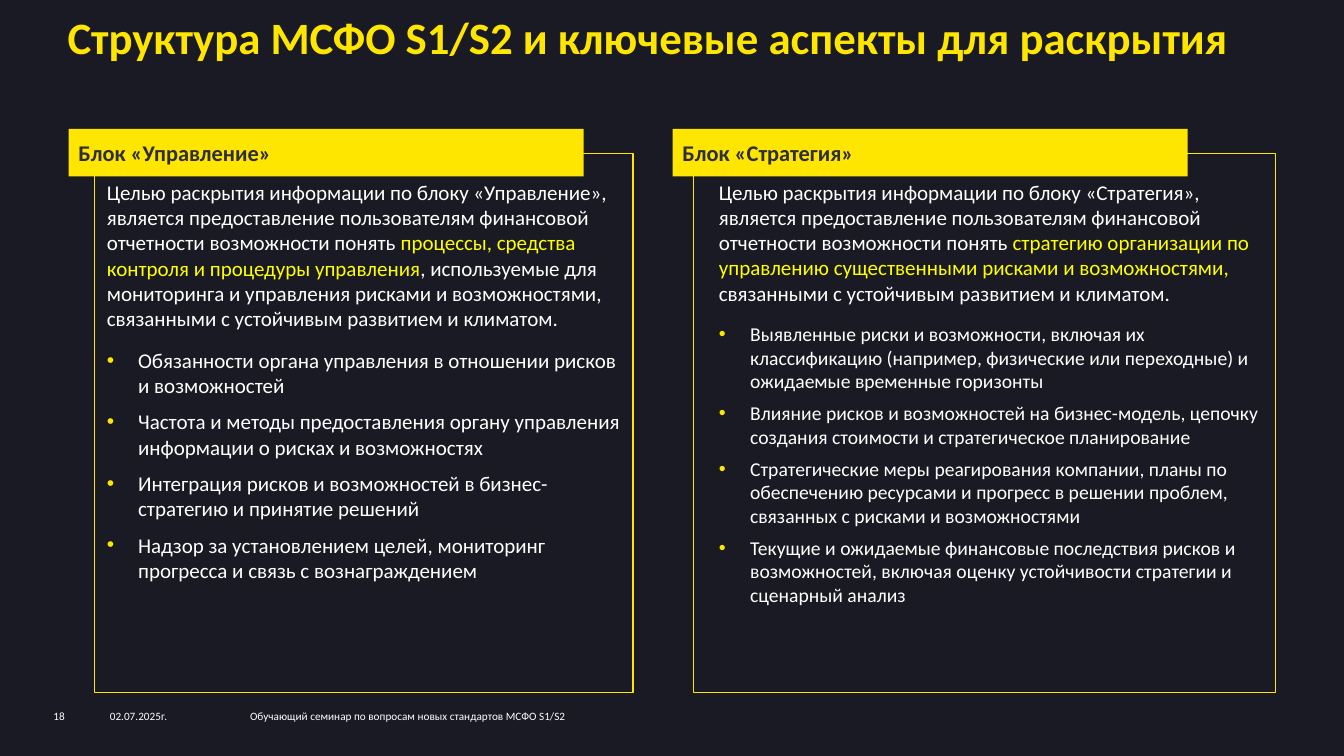
import pptx
import pptx.util
import pptx.dml.color
import pptx.enum.shapes
import pptx.enum.text
import pptx.oxml.ns
import lxml.etree

Inches = pptx.util.Inches
Pt = pptx.util.Pt

COLORS = {
    "background": "1A1A24",
    "accent": "FFE600",
    "highlight": "FFFF00",
    "text": "FFFFFF",
    "heading": "2E2E38",
}


def rgb(name):
    return pptx.dml.color.RGBColor.from_string(COLORS[name])


def write(text, frame, size=15, color="text", bold=False, after=0, line=None,
          bullet=False, left=0, new=True):
    if not new:
        paragraph = frame.paragraphs[-1]
    elif frame.paragraphs[0].runs:
        paragraph = frame.add_paragraph()
    else:
        paragraph = frame.paragraphs[0]
        frame.word_wrap = True
        frame.margin_left = Inches(left)
        frame.margin_top = frame.margin_right = frame.margin_bottom = 0
    if new:
        paragraph.alignment = pptx.enum.text.PP_ALIGN.LEFT
        paragraph.space_after = Pt(after)
        if line:
            paragraph.line_spacing = line
    if bullet:
        properties = paragraph._p.get_or_add_pPr()
        properties.set("marL", str(Inches(0.31)))
        properties.set("indent", str(-Inches(0.31)))
        qn = pptx.oxml.ns.qn
        bullet_color = lxml.etree.SubElement(properties, qn("a:buClr"))
        lxml.etree.SubElement(bullet_color, qn("a:srgbClr"), val=COLORS["accent"])
        lxml.etree.SubElement(properties, qn("a:buFont"), typeface="Arial")
        lxml.etree.SubElement(properties, qn("a:buChar"), char="•")
    run = paragraph.add_run()
    run.text = text
    run.font.name = "Calibri"
    run.font.size = Pt(size)
    run.font.bold = bold
    run.font.color.rgb = rgb(color)


presentation = pptx.Presentation()
presentation.slide_width = Inches(13.33)
presentation.slide_height = Inches(7.5)
slide = presentation.slides.add_slide(presentation.slide_layouts[6])
slide.background.fill.solid()
slide.background.fill.fore_color.rgb = rgb("background")
shapes = slide.shapes
RECTANGLE = pptx.enum.shapes.MSO_SHAPE.RECTANGLE

title = shapes.add_textbox(Inches(0.67), Inches(0.18), Inches(12), Inches(0.65))
write("Структура МСФО S1/S2 и ключевые аспекты для раскрытия", title.text_frame,
      size=32, color="accent", bold=True, line=0.85)

blocks = [
    {
        "heading": "Блок «Управление»",
        "heading_left": 0.68, "border": (0.94, 5.34), "body": (1.06, 5.11, 4.39),
        "goal": [
            ("Целью раскрытия информации по блоку «Управление», является предоставление "
             "пользователям финансовой отчетности возможности понять ", "text"),
            ("процессы, средства контроля и процедуры управления", "highlight"),
            (", используемые для мониторинга и управления рисками и возможностями, "
             "связанными с устойчивым развитием и климатом.", "text"),
        ],
        "aspects": [
            "Обязанности органа управления в отношении рисков и возможностей",
            "Частота и методы предоставления органу управления информации о рисках и возможностях",
            "Интеграция рисков и возможностей в бизнес-стратегию и принятие решений",
            "Надзор за установлением целей, мониторинг прогресса и связь с вознаграждением",
        ],
        "aspect_size": 15, "aspect_after": 8,
    },
    {
        "heading": "Блок «Стратегия»",
        "heading_left": 6.67, "border": (6.88, 5.77), "body": (7.13, 5.42, 4.86),
        "goal": [
            ("Целью раскрытия информации по блоку «Стратегия», является предоставление "
             "пользователям финансовой отчетности возможности понять", "text"),
            (" стратегию организации по управлению существенными рисками и возможностями, ",
             "highlight"),
            ("связанными с устойчивым развитием и климатом.", "text"),
        ],
        "aspects": [
            "Выявленные риски и возможности, включая их классификацию (например, физические "
            "или переходные) и ожидаемые временные горизонты",
            "Влияние рисков и возможностей на бизнес-модель, цепочку создания стоимости "
            "и стратегическое планирование",
            "Стратегические меры реагирования компании, планы по обеспечению ресурсами "
            "и прогресс в решении проблем, связанных с рисками и возможностями",
            "Текущие и ожидаемые финансовые последствия рисков и возможностей, включая "
            "оценку устойчивости стратегии и сценарный анализ",
        ],
        "aspect_size": 14, "aspect_after": 6,
    },
]

for block in blocks:
    border_left, border_width = block["border"]
    border = shapes.add_shape(RECTANGLE, Inches(border_left), Inches(1.52),
                              Inches(border_width), Inches(5.35))
    border.shadow.inherit = False
    border.fill.background()
    border.line.color.rgb = rgb("accent")
    border.line.width = Pt(1)

    heading = shapes.add_shape(RECTANGLE, Inches(block["heading_left"]), Inches(1.28),
                               Inches(5.11), Inches(0.47))
    heading.shadow.inherit = False
    heading.fill.solid()
    heading.fill.fore_color.rgb = rgb("accent")
    heading.line.fill.background()
    heading.text_frame.vertical_anchor = pptx.enum.text.MSO_ANCHOR.MIDDLE
    write(block["heading"], heading.text_frame, size=16, color="heading", bold=True, left=0.1)

    body_left, body_width, body_height = block["body"]
    body = shapes.add_textbox(Inches(body_left), Inches(1.78),
                              Inches(body_width), Inches(body_height)).text_frame
    for position, (passage, color) in enumerate(block["goal"]):
        write(passage, body, color=color, after=12, new=position == 0)
    for aspect in block["aspects"]:
        write(aspect, body, size=block["aspect_size"], after=block["aspect_after"], bullet=True)

footer = [
    ("18", 0.53, 0.56),
    ("02.07.2025г.", 1.09, 1.4),
    ("Обучающий семинар по вопросам новых стандартов МСФО S1/S2", 2.48, 4.18),
]
for note, left, width in footer:
    note_box = shapes.add_textbox(Inches(left), Inches(7.04), Inches(width), Inches(0.13))
    write(note, note_box.text_frame, size=8)

presentation.save("out.pptx")
